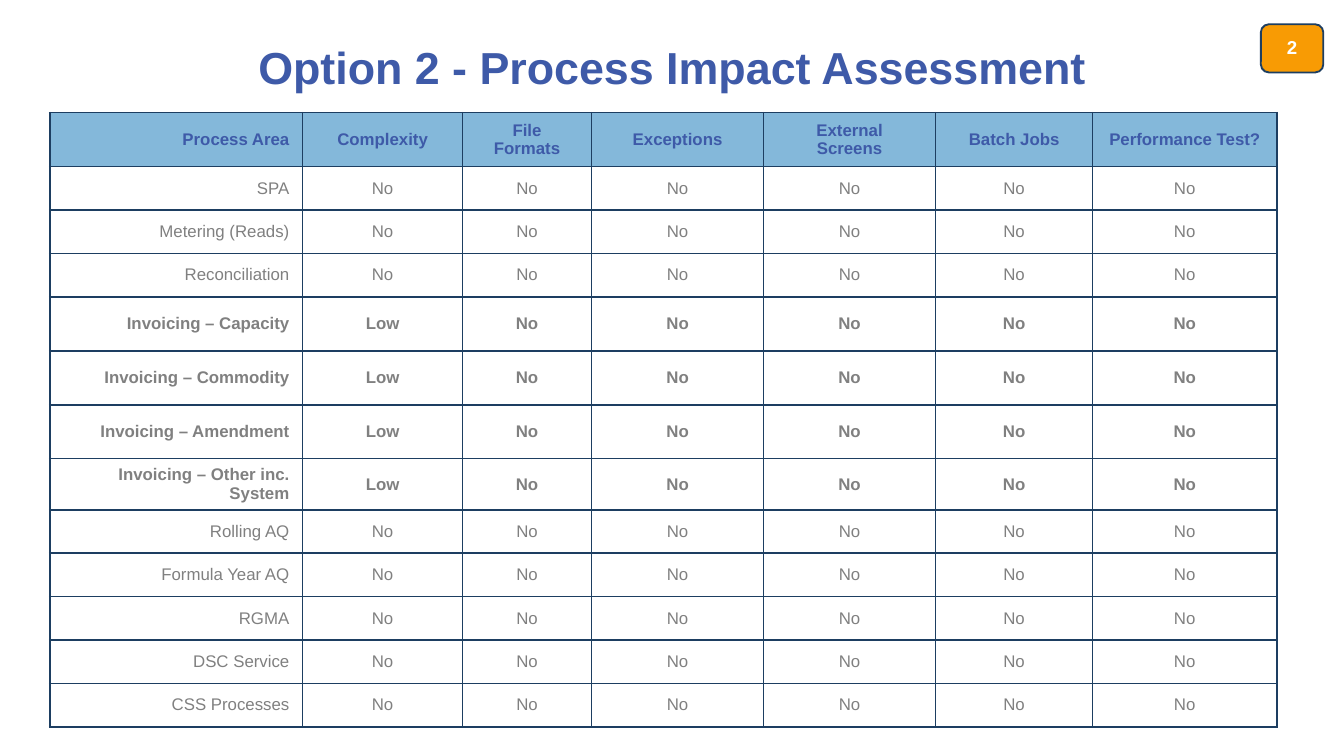
"""Build the Option 2 process impact assessment slide."""
from lxml import etree
from pptx import Presentation
from pptx.dml.color import RGBColor
from pptx.enum.shapes import MSO_SHAPE
from pptx.enum.text import MSO_ANCHOR, PP_ALIGN
from pptx.oxml.ns import qn
from pptx.util import Cm, Pt

ROUNDED = MSO_SHAPE.ROUNDED_RECTANGLE
MIDDLE = MSO_ANCHOR.MIDDLE
CENTER, RIGHT = PP_ALIGN.CENTER, PP_ALIGN.RIGHT
BLUE = RGBColor(0x3E, 0x5A, 0xA8)
NAVY = RGBColor(0x1D, 0x3E, 0x61)
SKY = RGBColor(0x84, 0xB8, 0xDA)
GREY = RGBColor(0x80, 0x80, 0x80)
ORANGE = RGBColor(0xF8, 0x9B, 0x04)
WHITE = RGBColor(0xFF, 0xFF, 0xFF)

HEADINGS = ["Process Area", "Complexity", "File\nFormats", "Exceptions",
            "External\nScreens", "Batch Jobs", "Performance Test?"]
COLUMN_WIDTHS = [4.78, 3.02, 2.44, 3.25, 3.25, 2.97, 3.48]
PROCESSES = [
    ("SPA", "No"),
    ("Metering (Reads)", "No"),
    ("Reconciliation", "No"),
    ("Invoicing – Capacity", "Low"),
    ("Invoicing – Commodity", "Low"),
    ("Invoicing – Amendment", "Low"),
    ("Invoicing – Other inc. System", "Low"),
    ("Rolling AQ", "No"),
    ("Formula Year AQ", "No"),
    ("RGMA", "No"),
    ("DSC Service", "No"),
    ("CSS Processes", "No"),
]
TALL_ROWS = (0, 4, 5, 6)


def format_text(frame, align, color, size, bold=True):
    frame.vertical_anchor = MIDDLE
    for para in frame.paragraphs:
        para.alignment = align
        values = {"name": "Arial", "size": Pt(size), "bold": bold}
        for name, value in values.items():
            setattr(para.font, name, value)
        para.font.color.rgb = color


def add_borders(cell):
    properties = cell._tc.get_or_add_tcPr()
    for position, side in enumerate(("lnL", "lnR", "lnT", "lnB")):
        line = etree.Element(qn(f"a:{side}"), w=str(Pt(1)))
        fill = etree.SubElement(line, qn("a:solidFill"))
        etree.SubElement(fill, qn("a:srgbClr"), val=str(NAVY))
        properties.insert(position, line)


deck = Presentation()
deck.slide_width, deck.slide_height = Cm(25.4), Cm(14.29)
page = deck.slides.add_slide(deck.slide_layouts[5])

title = page.shapes.title
place = {"left": Cm(1.27), "top": Cm(0.36), "width": Cm(22.86), "height": Cm(1.78)}
for name, value in place.items():
    setattr(title, name, value)
title.text_frame.text = "Option 2 - Process Impact Assessment"
format_text(title.text_frame, CENTER, BLUE, 24)

rows = [HEADINGS] + [[area, level] + ["No"] * 5 for area, level in PROCESSES]
table = page.shapes.add_table(len(rows), len(HEADINGS), Cm(0.94), Cm(2.13),
                              Cm(23.19), Cm(11.46)).table
for column, width in zip(table.columns, COLUMN_WIDTHS):
    column.width = Cm(width)
for row_number, row in enumerate(rows):
    table.rows[row_number].height = Cm(1.02 if row_number in TALL_ROWS else 0.82)
    header = row_number == 0
    for column_number, text in enumerate(row):
        cell = table.cell(row_number, column_number)
        cell.text_frame.text = text
        cell.vertical_anchor = MIDDLE
        cell.fill.solid()
        cell.fill.fore_color.rgb = SKY if header else WHITE
        format_text(cell.text_frame, CENTER if column_number else RIGHT,
                    BLUE if header else GREY, 9, header or row[1] == "Low")
        add_borders(cell)

badge = page.shapes.add_shape(ROUNDED, Cm(23.83), Cm(0.46), Cm(1.18), Cm(0.91))
badge.shadow.inherit = False
badge.fill.solid()
badge.fill.fore_color.rgb = ORANGE
badge.line.color.rgb = NAVY
badge.line.width = Pt(1)
frame = badge.text_frame
for side in ("left", "right", "top", "bottom"):
    setattr(frame, f"margin_{side}", Cm(0.1))
frame.text = "2"
frame.paragraphs[0].line_spacing = 0.9
format_text(frame, CENTER, WHITE, 10)

deck.save("out.pptx")
